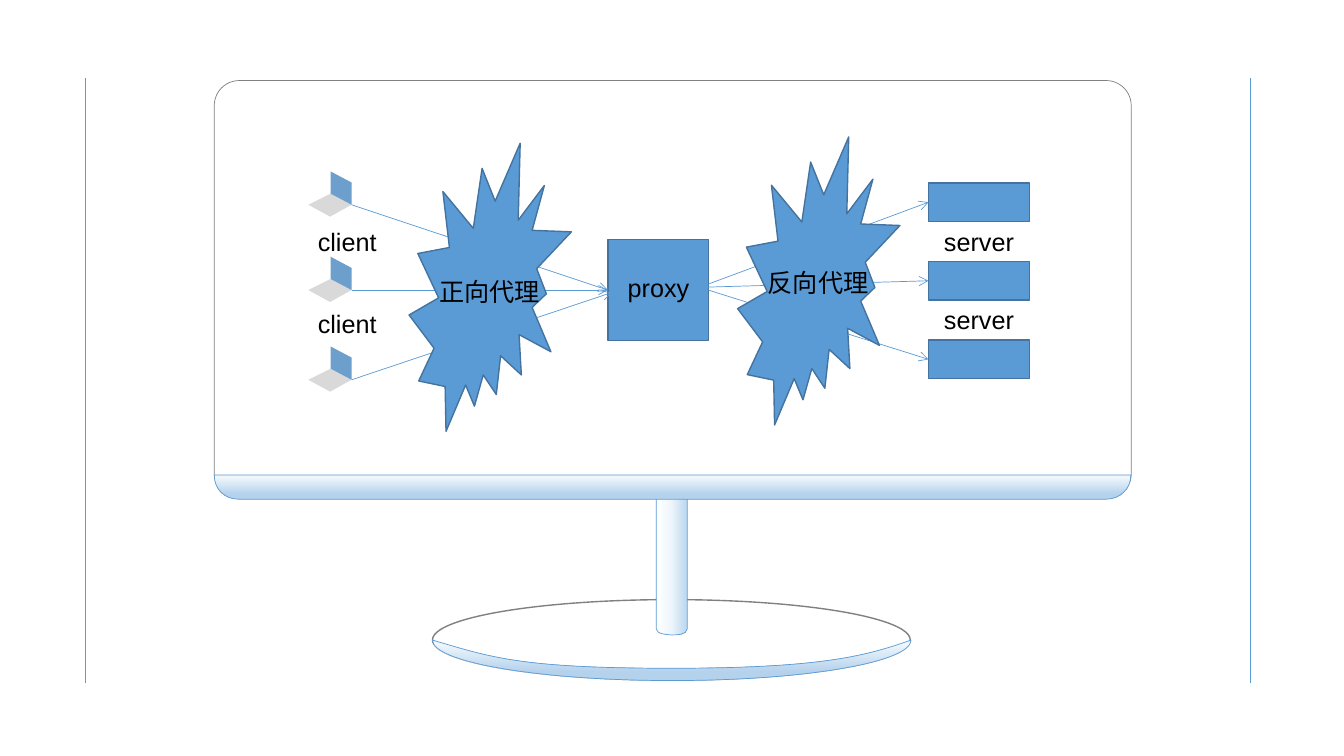
from dataclasses import dataclass

from lxml.etree import SubElement
from pptx import Presentation
from pptx.dml.color import RGBColor
from pptx.enum.shapes import MSO_CONNECTOR, MSO_SHAPE
from pptx.enum.text import MSO_AUTO_SIZE
from pptx.oxml import parse_xml
from pptx.oxml.ns import nsdecls, qn
from pptx.util import Cm, Pt


@dataclass(frozen=True)
class Theme:
    blue: str = "5B9BD5"
    outline: str = "43739E"
    grey: str = "808080"
    white: str = "FFFFFF"
    keyboard: str = "D9D9D9"
    screen: str = "6D9FCC"
    text: str = "000000"
    font: str = "Arial"
    size: float = 18
    thin: float = 0.5
    thick: float = 1
    stand: tuple = ((0, "FFFFFF"), (47, "EFF6FC"), (99, "BDD7EE"))
    glass: tuple = ((10, "EFF6FC"), (79, "B5D2EC"))


@dataclass(frozen=True)
class Box:
    left: float
    top: float
    width: float
    height: float

    def emu(self) -> list:
        return [Cm(v) for v in (self.left, self.top, self.width, self.height)]


@dataclass(frozen=True)
class Label:
    text: str
    left: float
    top: float
    width: float


@dataclass(frozen=True)
class Outline:
    """Start point, then steps: two numbers for a line, six for a Bezier curve."""
    start: tuple
    steps: tuple
    stops: tuple
    angle: int


T = Theme()
LABEL_HEIGHT = 1.02

STAND = Outline((17.12, 12.27), (
    (17.22, 12.27, 17.32, 12.37, 17.32, 12.47), (17.32, 15.85),
    (17.3, 16, 17.07, 16, 16.94, 16), (16.84, 16, 16.54, 15.98, 16.54, 15.85),
    (16.54, 12.47), (16.54, 12.37, 16.64, 12.27, 16.76, 12.27)), T.stand, 0)
CHIN = Outline((28.5, 11.97), (
    (28.5, 12.33, 28.22, 12.58, 27.86, 12.58), (6.02, 12.58),
    (5.66, 12.58, 5.4, 12.33, 5.4, 11.97)), T.glass, 90)
FOOT_RIM = Outline((10.9, 16.13), (
    (12.37, 16.56, 13.08, 16.84, 16.94, 16.84),
    (20.78, 16.84, 21.87, 16.51, 22.96, 16.13),
    (22.96, 16.69, 20.27, 17.15, 16.94, 17.15),
    (13.61, 17.15, 10.9, 16.69, 10.9, 16.13)), T.glass, 90)

LAPTOP_X, LAPTOP_YS = 8.86, (5.16, 7.31, 9.57)
KEYBOARD = ((0, 0), (-0.54, 0.3), (-1.09, 0), (-0.53, -0.28))
SCREEN = ((0, 0), (-0.53, -0.28), (-0.53, -0.84), (0, -0.56))
PROXY = Box(15.32, 6.04, 2.54, 2.54)
SERVERS = [Box(23.4, 4.61 + 1.98 * i, 2.54, 0.97) for i in range(3)]
BURSTS = (Box(10.31, 3.61, 4.09, 7.26), Box(18.59, 3.45, 4.09, 7.26))
PROXY_LABEL = Label("proxy", 15.57, 6.73, 2.06)
LABELS = (
    Label("client", 7.76, 5.59, 2.04), Label("client", 7.76, 7.65, 2.04),
    Label("server", 23.54, 5.59, 2.32), Label("server", 23.54, 7.54, 2.32),
    Label("正向代理", 10.82, 6.83, 3.06), Label("反向代理", 19.1, 6.62, 3.06),
)


def style(shape, fill: str | None, line: str | None, width: float = T.thick):
    shape.shadow.inherit = False
    for part, color in ((shape.fill, fill), (shape.line.fill, line)):
        if color is None:
            part.background()
        else:
            part.solid()
            part.fore_color.rgb = RGBColor.from_string(color)
    if line is not None:
        shape.line.width = Pt(width)
    return shape


def add_box(s, kind, box: Box, fill: str | None, line: str, width: float = T.thick):
    return style(s.shapes.add_shape(kind, *box.emu()), fill, line, width)


def add_polygon(s, points: list, fill: str, line: str | None):
    start, *rest = [(Cm(x), Cm(y)) for x, y in points]
    builder = s.shapes.build_freeform(*start)
    builder.add_line_segments(rest, close=True)
    return style(builder.convert_to_shape(), fill, line, T.thin)


def bend(shape, steps: tuple) -> None:
    """Turn the straight segments of the six-number steps into Bezier curves."""
    segments = list(shape._element.iter(qn("a:lnTo")))
    for segment, step in zip(segments, steps):
        if len(step) == 6:
            points = "".join(f'<a:pt x="{Cm(x) - shape.left}" y="{Cm(y) - shape.top}"/>'
                             for x, y in zip(step[::2], step[1::2]))
            curve = parse_xml(f'<a:cubicBezTo {nsdecls("a")}>{points}</a:cubicBezTo>')
            segment.getparent().replace(segment, curve)


def add_outline(s, outline: Outline):
    points = [outline.start, *(step[-2:] for step in outline.steps)]
    shape = add_polygon(s, points, T.white, T.blue)
    bend(shape, outline.steps)
    stops = "".join(f'<a:gs pos="{pos * 1000}"><a:srgbClr val="{color}"/></a:gs>'
                    for pos, color in outline.stops)
    gradient = parse_xml(f'<a:gradFill {nsdecls("a")}><a:gsLst>{stops}</a:gsLst>'
                         f'<a:lin ang="{outline.angle * 60000}" scaled="0"/></a:gradFill>')
    props = shape._element.spPr
    props.replace(props.find(qn("a:solidFill")), gradient)
    return shape


def add_line(s, start: tuple, end: tuple, arrow: bool = False):
    line = s.shapes.add_connector(MSO_CONNECTOR.STRAIGHT,
                                  *[Cm(v) for v in (*start, *end)])
    line.line.color.rgb = RGBColor.from_string(T.blue)
    line.line.width = Pt(T.thin)
    props = line._element.spPr
    if arrow:
        SubElement(props.find(qn("a:ln")), qn("a:tailEnd"), type="arrow")
    SubElement(props, qn("a:effectLst"))
    return line


def add_label(s, label: Label):
    box = Box(label.left, label.top, label.width, LABEL_HEIGHT)
    shape = s.shapes.add_textbox(*box.emu())
    tf = shape.text_frame
    for name, value in {"word_wrap": False,
                        "auto_size": MSO_AUTO_SIZE.SHAPE_TO_FIT_TEXT}.items():
        setattr(tf, name, value)
    r = tf.paragraphs[0].add_run()
    r.text = label.text
    for name, value in {"name": T.font, "size": Pt(T.size)}.items():
        setattr(r.font, name, value)
    r.font.color.rgb = RGBColor.from_string(T.text)
    return shape


def add_computer(s) -> None:
    foot = add_box(s, MSO_SHAPE.OVAL, Box(10.9, 15.11, 12.04, 2.03), None, T.grey)
    display = add_box(s, MSO_SHAPE.ROUNDED_RECTANGLE, Box(5.4, 2.03, 23.11, 10.54),
                      T.white, T.grey, T.thin)
    display.adjustments[0] = 0.06
    parts = [add_outline(s, outline) for outline in (STAND, CHIN, FOOT_RIM)]
    s.shapes.add_group_shape([foot, display, *parts])


def add_laptop(s, x: float, y: float) -> None:
    parts = [add_polygon(s, [(x + dx, y + dy) for dx, dy in corners], fill, None)
             for corners, fill in ((KEYBOARD, T.keyboard), (SCREEN, T.screen))]
    s.shapes.add_group_shape(parts)


def main() -> None:
    prs = Presentation()
    prs.slide_width, prs.slide_height = Cm(33.87), Cm(19.05)
    s = prs.slides.add_slide(prs.slide_layouts[6])

    add_computer(s)
    for x in (2.16, 31.5):
        add_line(s, (x, 17.22), (x, 1.96))
    for y in LAPTOP_YS:
        add_laptop(s, LAPTOP_X, y)

    proxy = add_box(s, MSO_SHAPE.RECTANGLE, PROXY, T.blue, T.outline)
    proxy_label = add_label(s, PROXY_LABEL)
    for y in LAPTOP_YS[:2]:
        add_line(s, (LAPTOP_X, y), (15.32, 7.31), arrow=True).end_connect(proxy, 1)
    add_line(s, (LAPTOP_X, LAPTOP_YS[2]), (15.42, 7.37), arrow=True)
    for box in SERVERS:
        server = add_box(s, MSO_SHAPE.RECTANGLE, box, T.blue, T.outline)
        link = add_line(s, (17.63, 7.24), (box.left, box.top), arrow=True)
        link.begin_connect(proxy_label, 3)
        link.end_connect(server, 1)

    for box in BURSTS:
        add_box(s, MSO_SHAPE.EXPLOSION2, box, T.blue, T.outline)
    for label in LABELS:
        add_label(s, label)
    prs.save("out.pptx")


if __name__ == "__main__":
    main()
